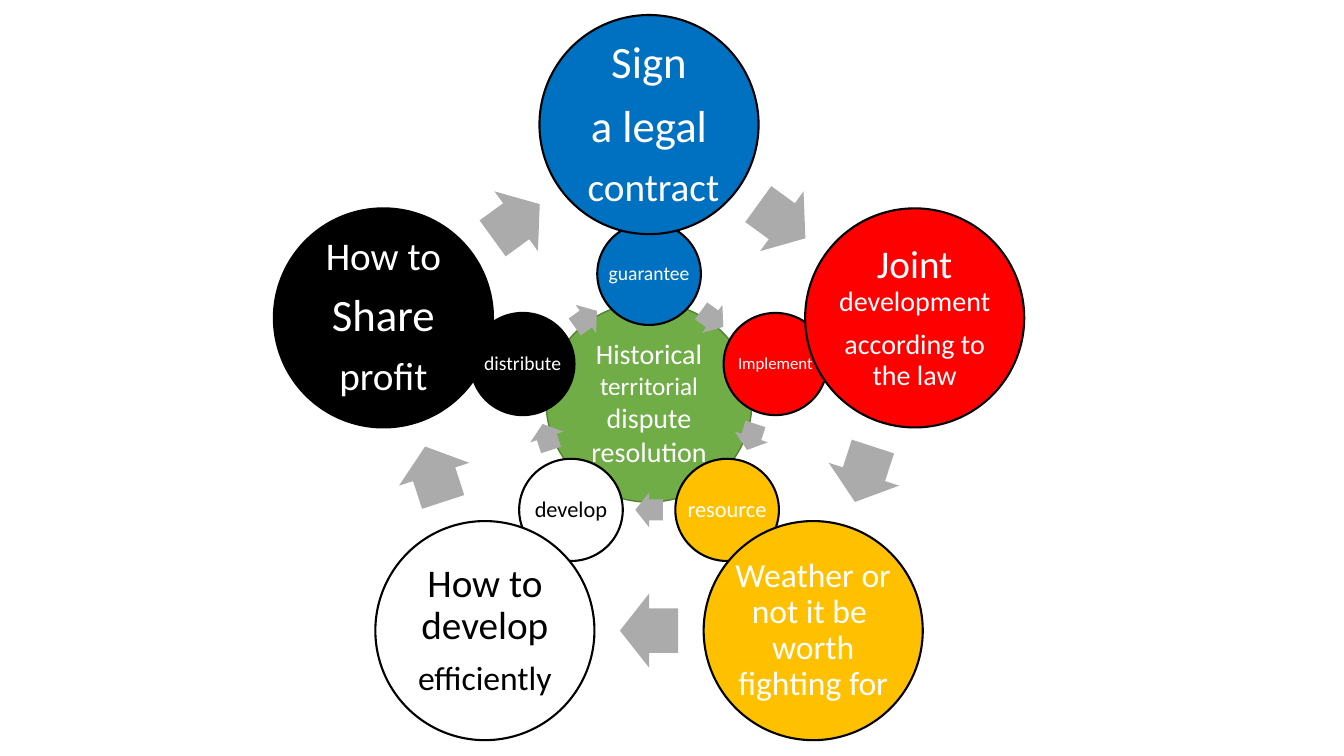
import math
from dataclasses import dataclass

import pptx
import pptx.dml.color
import pptx.enum.shapes
import pptx.enum.text
import pptx.util

Pt = pptx.util.Pt
MSO_SHAPE = pptx.enum.shapes.MSO_SHAPE
CENTER_X, CENTER_Y = 463.6, 288.8
STEP = 72
ARROW_FILL = "ABABAB"


@dataclass(frozen=True)
class Run:
    text: str
    size: float


Paragraph = tuple[Run, ...]


@dataclass(frozen=True)
class Ring:
    radius_x: float
    radius_y: float
    circle_w: float
    circle_h: float
    arrow_w: float
    arrow_h: float


@dataclass(frozen=True)
class Stage:
    fill: str
    ink: str
    keyword: Run
    detail: tuple[Paragraph, ...]


INNER = Ring(94.9, 93.2, 74, 73, 19.6, 24.8)
OUTER = Ring(199.5, 199.8, 156.5, 156.5, 41.6, 52.8)

CORE_TEXT = (
    (Run("Historical", 20),),
    (Run("territorial ", 18), Run("dispute", 20)),
    (Run("resolution", 20),),
)

STAGES = (
    Stage("0070C0", "FFFFFF", Run("guarantee", 14),
          ((Run("Sign", 32),), (Run("a legal", 32),), (Run(" contract", 28),))),
    Stage("FF0000", "FFFFFF", Run("Implement", 12),
          ((Run("Joint ", 28), Run("development", 20)),
           (Run("according to the law", 20),))),
    Stage("FFC000", "FFFFFF", Run("resource", 16),
          ((Run("Weather or not it be \vworth fighting for", 24),),)),
    Stage("FFFFFF", "000000", Run("develop", 16),
          ((Run("How to develop", 28),), (Run("efficiently", 24),))),
    Stage("000000", "FFFFFF", Run("distribute", 14),
          ((Run("How to", 28),), (Run("Share", 32),), (Run("profit", 28),))),
)


def rgb(value: str) -> pptx.dml.color.RGBColor:
    return pptx.dml.color.RGBColor.from_string(value)


def add_centered(shapes, kind, x: float, y: float, w: float, h: float, fill: str):
    sp = shapes.add_shape(kind, Pt(x - w / 2), Pt(y - h / 2), Pt(w), Pt(h))
    sp.shadow.inherit = False
    sp.fill.solid()
    sp.fill.fore_color.rgb = rgb(fill)
    return sp


def set_outline(sp, color: str, width: float) -> None:
    sp.line.color.rgb = rgb(color)
    sp.line.width = Pt(width)


def write_text(sp, paragraphs: tuple[Paragraph, ...], ink: str,
               line_spacing: float = 1, after: float = 0) -> None:
    tf = sp.text_frame
    tf.word_wrap = True
    tf.vertical_anchor = pptx.enum.text.MSO_ANCHOR.MIDDLE
    for index, runs in enumerate(paragraphs):
        p = tf.add_paragraph() if index else tf.paragraphs[0]
        p.alignment = pptx.enum.text.PP_ALIGN.CENTER
        p.line_spacing = line_spacing
        p.space_after = Pt(after * max(run.size for run in runs))
        p.font.name = "Calibri"
        p.font.color.rgb = rgb(ink)
        if len(runs) == 1:
            p.font.size = Pt(runs[0].size)
            p.text = runs[0].text
            continue
        for run in runs:
            r = p.add_run()
            r.text = run.text
            r.font.size = Pt(run.size)


def ring_point(ring: Ring, degrees: float, scale: float = 1) -> tuple[float, float]:
    angle = math.radians(degrees)
    return (CENTER_X + scale * ring.radius_x * math.sin(angle),
            CENTER_Y - scale * ring.radius_y * math.cos(angle))


def add_circle(shapes, ring: Ring, degrees: float, stage: Stage,
               paragraphs: tuple[Paragraph, ...]) -> None:
    x, y = ring_point(ring, degrees)
    sp = add_centered(shapes, MSO_SHAPE.OVAL, x, y,
                      ring.circle_w, ring.circle_h, stage.fill)
    set_outline(sp, "000000", 1.5)
    tf = sp.text_frame
    tf.margin_left = tf.margin_right = tf.margin_top = tf.margin_bottom = Pt(-2.8)
    write_text(sp, paragraphs, stage.ink, 0.9, 0.35)


def add_arrow(shapes, ring: Ring, degrees: float) -> None:
    x, y = ring_point(ring, degrees, math.cos(math.radians(STEP / 2)))
    sp = add_centered(shapes, MSO_SHAPE.RIGHT_ARROW, x, y,
                      ring.arrow_w, ring.arrow_h, ARROW_FILL)
    sp.adjustments[0] = 0.6
    sp.adjustments[1] = 0.5
    sp.rotation = degrees
    sp.line.fill.background()


def add_ring(shapes, ring: Ring, texts: list[tuple[Paragraph, ...]]) -> None:
    for index, (stage, paragraphs) in enumerate(zip(STAGES, texts)):
        add_circle(shapes, ring, index * STEP, stage, paragraphs)
        add_arrow(shapes, ring, (index + 0.5) * STEP)


def main() -> None:
    prs = pptx.Presentation()
    prs.slide_width, prs.slide_height = Pt(960), Pt(540)
    s = prs.slides.add_slide(prs.slide_layouts[6])
    core = add_centered(s.shapes, MSO_SHAPE.OVAL, CENTER_X, 287.3, 147, 142.6, "70AD47")
    set_outline(core, "538035", 1)
    write_text(core, CORE_TEXT, "FFFFFF")
    add_ring(s.shapes, INNER, [((stage.keyword,),) for stage in STAGES])
    add_ring(s.shapes, OUTER, [stage.detail for stage in STAGES])
    prs.save("out.pptx")


if __name__ == "__main__":
    main()
